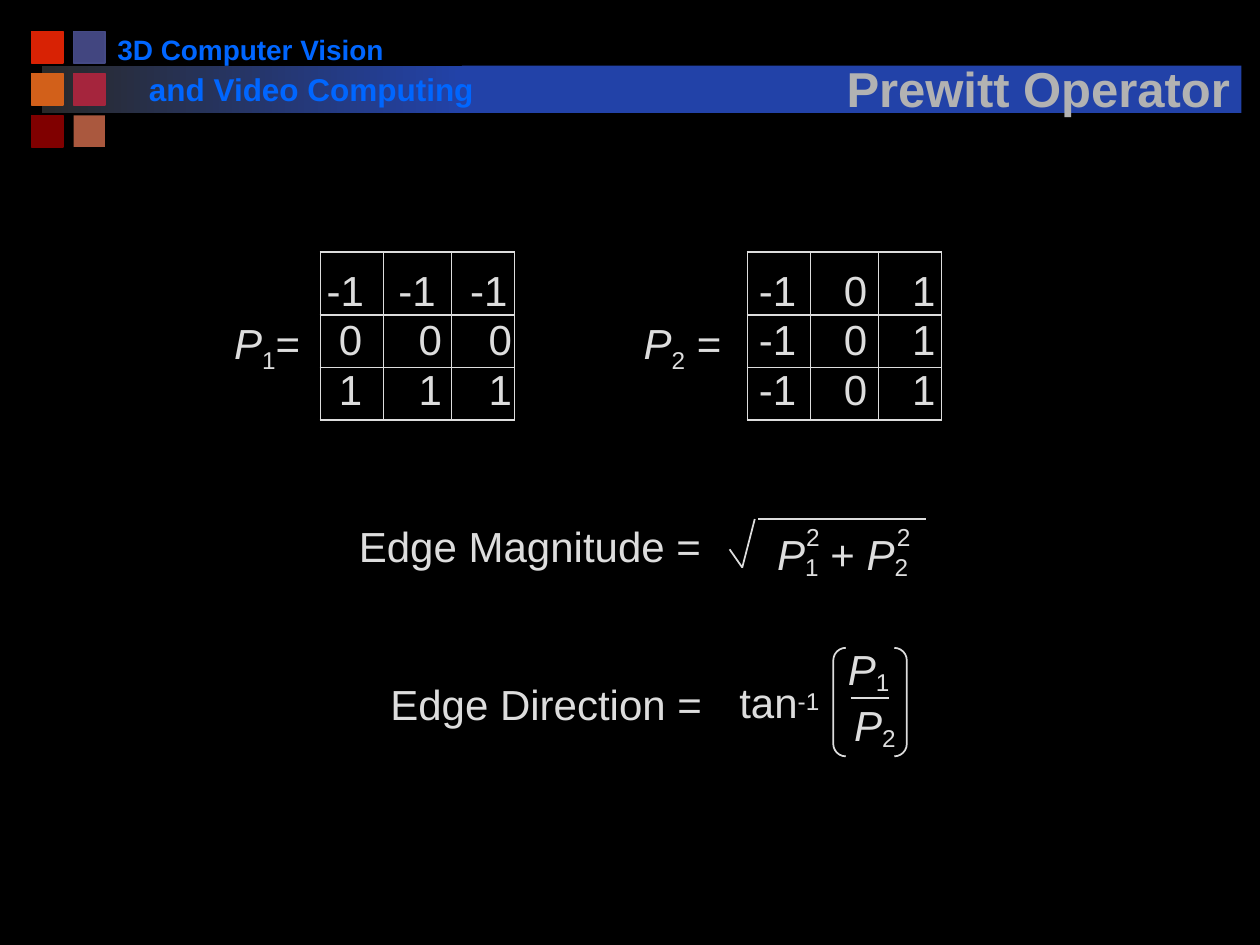
from lxml import etree
from pptx import Presentation
from pptx.dml.color import RGBColor
from pptx.enum.shapes import MSO_CONNECTOR, MSO_SHAPE
from pptx.enum.text import MSO_ANCHOR, MSO_AUTO_SIZE, PP_ALIGN
from pptx.oxml import parse_xml
from pptx.oxml.ns import nsdecls, qn
from pptx.util import Pt

COLORS = {
    "background": "000000", "charcoal": "292929", "banner": "2242A8",
    "red": "D82204", "indigo": "424680", "indigo_line": "454A85",
    "orange": "D2601A", "crimson": "A5253D", "maroon": "800000",
    "clay": "AA583E", "course": "0066FF", "title": "B2B2B2", "ink": "DDDDDD",
}
RGB = {name: RGBColor.from_string(value) for name, value in COLORS.items()}

presentation = Presentation()
presentation.slide_width, presentation.slide_height = Pt(720), Pt(540)
slide = presentation.slides.add_slide(presentation.slide_layouts[6])
slide.background.fill.solid()
slide.background.fill.fore_color.rgb = RGB["background"]


def add_text(left, top, width, height, runs, size=24, color="ink", bold=False):
    box = slide.shapes.add_textbox(Pt(left), Pt(top), Pt(width), Pt(height))
    frame = box.text_frame
    frame.word_wrap = False
    frame.auto_size = MSO_AUTO_SIZE.SHAPE_TO_FIT_TEXT
    for text, italic, baseline in runs:
        run = frame.paragraphs[0].add_run()
        run.text = text
        run.font.name = "Arial"
        run.font.size = Pt(size)
        run.font.bold = bold
        run.font.italic = italic
        run.font.color.rgb = RGB[color]
        if baseline:
            run.font._element.set("baseline", str(baseline * 1000))
    return box


def add_shape(kind, left, top, width, height, fill=None, line=None):
    shape = slide.shapes.add_shape(kind, Pt(left), Pt(top), Pt(width), Pt(height))
    shape.shadow.inherit = False
    if fill:
        shape.fill.solid()
        shape.fill.fore_color.rgb = RGB[fill]
    else:
        shape.fill.background()
    if line:
        shape.line.color.rgb = RGB[line]
        shape.line.width = Pt(1)
    else:
        shape.line.fill.background()
    return shape


fade = add_shape(MSO_SHAPE.RECTANGLE, 24, 37.5, 240, 27)
fade.fill.gradient()
fade.fill.gradient_angle = 0
for stop, name in zip(fade.fill.gradient_stops, ("charcoal", "banner")):
    stop.color.rgb = RGB[name]
add_shape(MSO_SHAPE.RECTANGLE, 264, 37.5, 445.5, 27, "banner")

squares = [
    [("red", "red"), ("indigo", "indigo_line")],
    [("orange", "orange"), ("crimson", "crimson")],
    [("maroon", "maroon"), ("clay", None)],
]
for row, pair in enumerate(squares):
    for column, (fill, line) in enumerate(pair):
        add_shape(MSO_SHAPE.RECTANGLE, 18 + 24 * column, 18 + 24 * row, 18, 18, fill, line)

add_text(60, 15.1, 167, 26.6, [("3D Computer Vision", False, 0)], 16, "course", True)
add_text(78, 36.7, 204, 29, [("and Video Computing", False, 0)], 18, "course", True)

title = add_text(476, 22.5, 234.5, 48, [("Prewitt Operator", False, 0)], 28, "title", True)
title.text_frame.auto_size = MSO_AUTO_SIZE.NONE
title.text_frame.vertical_anchor = MSO_ANCHOR.BOTTOM
title_paragraph = title.text_frame.paragraphs[0]
title_paragraph.alignment = PP_ALIGN.CENTER
shadow = parse_xml(
    f'<a:effectLst {nsdecls("a")}><a:outerShdw dist="35921" dir="2700000">'
    '<a:srgbClr val="000000"/></a:outerShdw></a:effectLst>'
)
title_paragraph.runs[0].font._element.find(qn("a:solidFill")).addnext(shadow)

matrices = [
    (183, [["-1", "-1", "-1"], ["0", "0", "0"], ["1", "1", "1"]],
     [(11, 9, 4), (12, 5.5, 1.5), (12, 5.5, 1.5)]),
    (427, [["-1", "0", "1"]] * 3, [(8, 6.5, 3.5)] * 3),
]
anchors = (MSO_ANCHOR.BOTTOM, MSO_ANCHOR.MIDDLE, MSO_ANCHOR.TOP)
for left, values, margins in matrices:
    table = slide.shapes.add_table(3, 3, Pt(left), Pt(144), Pt(111), Pt(96)).table
    table.first_row = table.horz_banding = False
    for column, width in zip(table.columns, (36, 39, 36)):
        column.width = Pt(width)
    for row, height in zip(table.rows, (36, 30, 30)):
        row.height = Pt(height)
    for r, row_values in enumerate(values):
        for c, value in enumerate(row_values):
            cell = table.cell(r, c)
            cell.margin_left = cell.margin_top = cell.margin_bottom = 0
            cell.margin_right = Pt(margins[r][c])
            cell.vertical_anchor = anchors[r]
            paragraph = cell.text_frame.paragraphs[0]
            paragraph.alignment = PP_ALIGN.RIGHT
            run = paragraph.add_run()
            run.text = value
            run.font.name = "Arial"
            run.font.size = Pt(24)
            run.font.color.rgb = RGB["ink"]
            properties = cell._tc.get_or_add_tcPr()
            for side in ("lnL", "lnR", "lnT", "lnB"):
                border = etree.SubElement(properties, qn(f"a:{side}"), w=str(Pt(0.75)))
                border_fill = etree.SubElement(border, qn("a:solidFill"))
                etree.SubElement(border_fill, qn("a:srgbClr"), val=COLORS["ink"])
            cell.fill.background()

formulas = [
    (126.7, 177.8, 54, [("P", True, 0), ("1", False, -25), ("=", False, 0)]),
    (360.7, 177.8, 79, [("P", True, 0), ("2", False, -25), (" =", False, 0)]),
    (198, 294, 216.7, [("Edge Magnitude =", False, 0)]),
    (216, 384, 199.5, [("Edge Direction =", False, 0)]),
    (437, 298.5, 91.5, [("P", True, 0), ("1", False, -15), (" + ", False, 0),
                        ("P", True, 0), ("2", False, -15)]),
    (415.4, 383.3, 62, [("tan", False, 0), ("-1", False, 20)]),
    (477.4, 364, 39.6, [("P", True, 0), ("1", False, -15)]),
    (481, 396, 39.6, [("P", True, 0), ("2", False, -15)]),
]
for left, top, width, runs in formulas:
    add_text(left, top, width, 36, runs)
for left in (453.6, 505.4):
    add_text(left, 294.5, 22.3, 24, [("2", False, 0)], 14)

strokes = [
    (433.4, 296.6, 529.2, 296.6),
    (431.3, 296.6, 424.1, 324.5),
    (416.9, 313.9, 424.1, 324.2),
    (486, 399, 508.3, 399),
]
for x1, y1, x2, y2 in strokes:
    stroke = slide.shapes.add_connector(MSO_CONNECTOR.STRAIGHT, Pt(x1), Pt(y1), Pt(x2), Pt(y2))
    stroke.line.color.rgb = RGB["ink"]
    stroke.line.width = Pt(1)
    etree.SubElement(stroke._element.spPr, qn("a:effectLst"))

brackets = add_shape(MSO_SHAPE.DOUBLE_BRACKET, 476.2, 370.2, 42, 62, line="ink")
brackets.adjustments[0] = 0.17

presentation.save("out.pptx")
